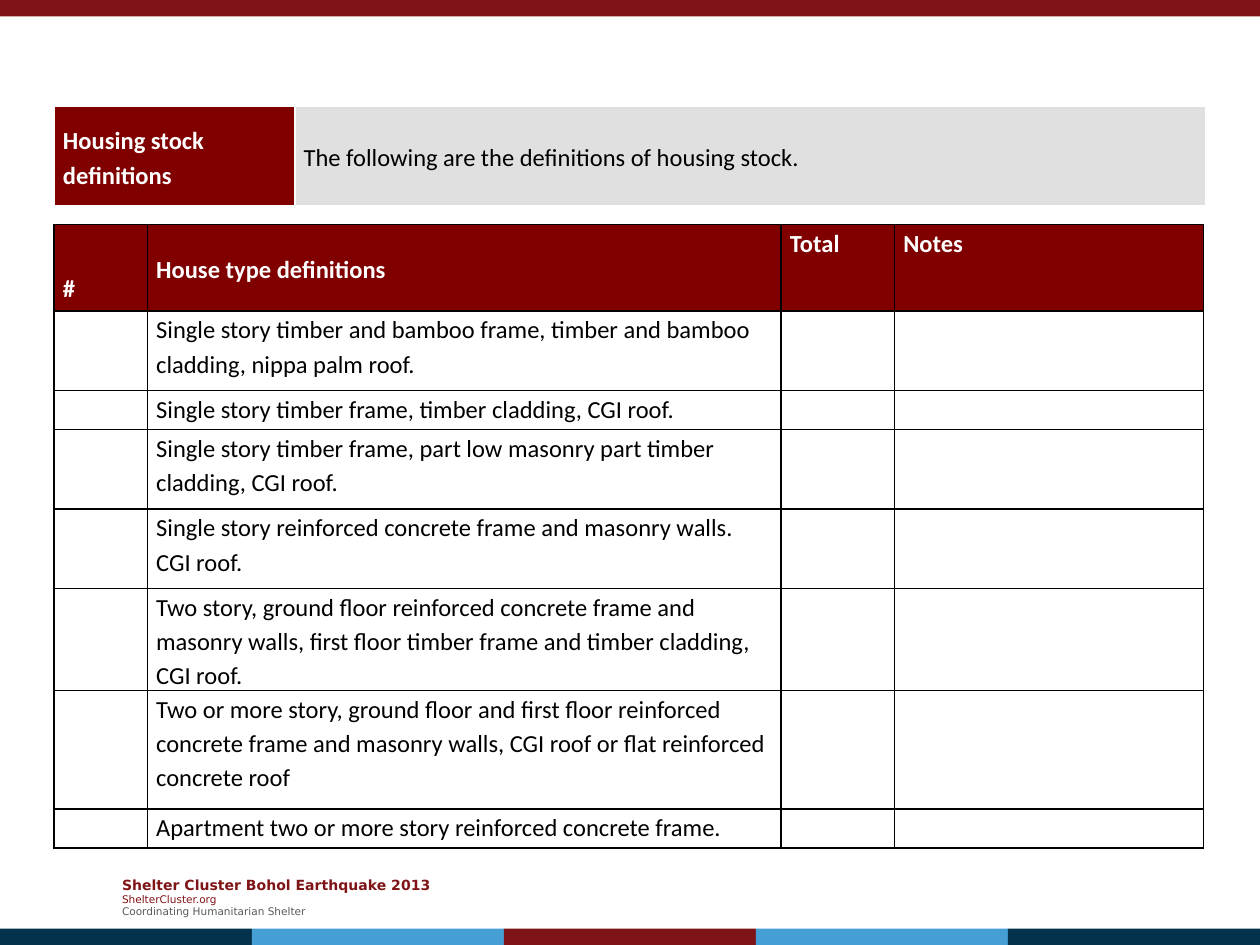
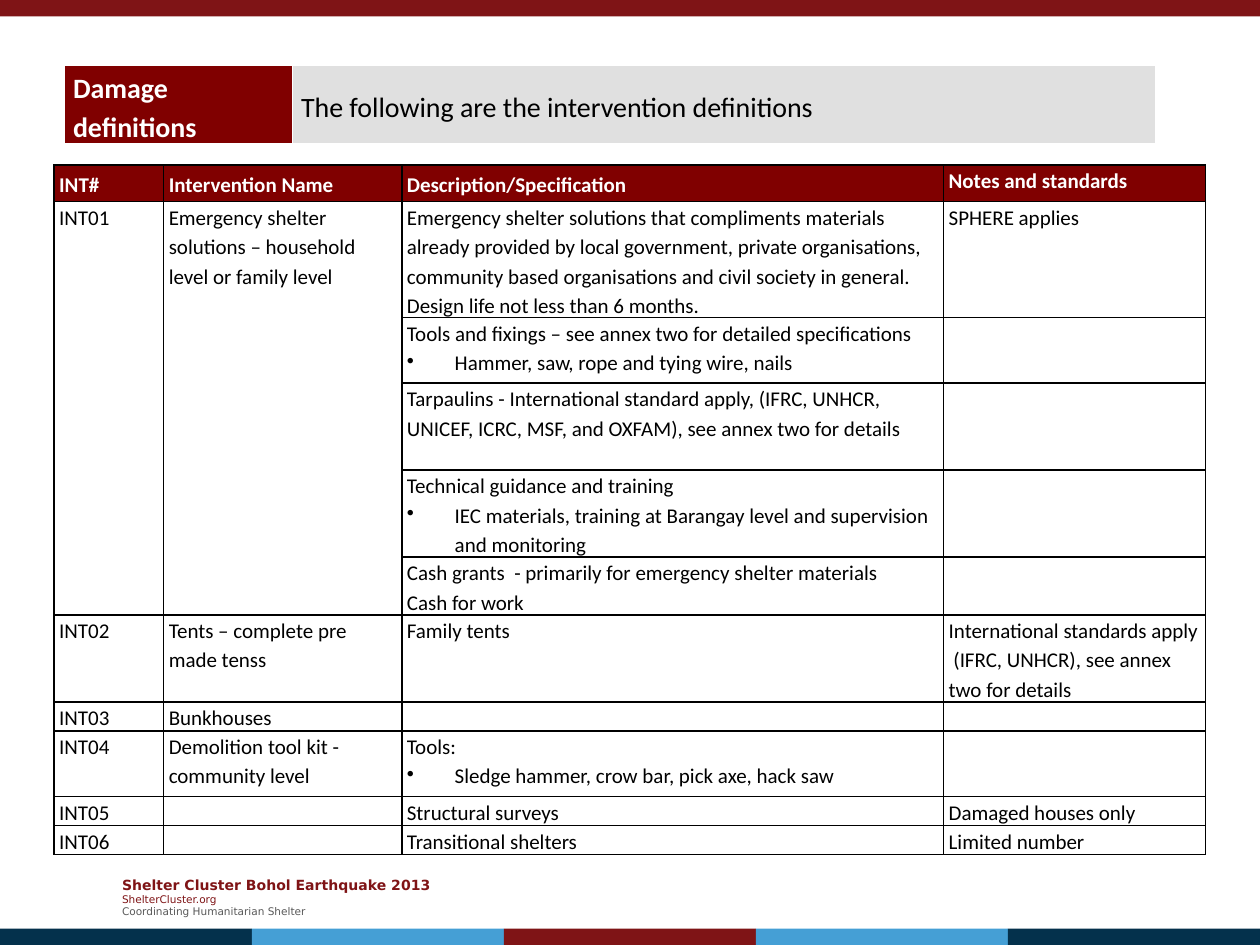
import dataclasses

import lxml.etree
import pptx
import pptx.dml.color
import pptx.enum.shapes
import pptx.enum.text
import pptx.oxml.ns
import pptx.util

Inches = pptx.util.Inches
qn = pptx.oxml.ns.qn
ANCHOR = pptx.enum.text.MSO_ANCHOR


@dataclasses.dataclass(frozen=True)
class Theme:
    """Colours, fonts and type sizes shared by the slides."""
    band: str = "7F1416"
    navy: str = "04314C"
    sky: str = "459FD5"
    header: str = "800000"
    panel: str = "E0E0E0"
    white: str = "FFFFFF"
    black: str = "000000"
    grey: str = "595959"
    body_font: str = "Calibri"
    footer_font: str = "DejaVu Sans"
    footer_title: float = 8
    footer_text: float = 6
    line_spacing: float = 1.15
    border: float = 1


THEME = Theme()

HOUSE_TYPES = [
    "Single story timber and bamboo frame, timber and bamboo cladding, nippa palm roof.",
    "Single story timber frame, timber cladding, CGI roof.",
    "Single story timber frame, part low masonry part timber cladding, CGI roof.",
    "Single story reinforced concrete frame and masonry walls. CGI roof.",
    "Two story, ground floor reinforced concrete frame and masonry walls, "
    "first floor timber frame and timber cladding, CGI roof.",
    "Two or more story, ground floor and first floor reinforced concrete frame "
    "and masonry walls, CGI roof or flat reinforced concrete roof",
    "Apartment two or more story reinforced concrete frame.",
]
HOUSE_ROWS = [["#", "House type definitions", "Total", "Notes"]]
HOUSE_ROWS += [["", house_type, "", ""] for house_type in HOUSE_TYPES]

INTERVENTION_ROWS = [
    ["INT#", "Intervention Name", "Description/Specification", "Notes and standards"],
    ["INT01", "Emergency shelter solutions – household level or family level",
     "Emergency shelter solutions that compliments materials already provided by local "
     "government, private organisations, community based organisations and civil society "
     "in general.\nDesign life not less than 6 months.", "SPHERE applies"],
    ["", "", "Tools and fixings – see annex two for detailed specifications\n"
     "• Hammer, saw, rope and tying wire, nails", ""],
    ["", "", "Tarpaulins - International standard apply, (IFRC, UNHCR, UNICEF, ICRC, MSF, "
     "and OXFAM), see annex two for details", ""],
    ["", "", "Technical guidance and training\n"
     "• IEC materials, training at Barangay level and supervision and monitoring", ""],
    ["", "", "Cash grants  - primarily for emergency shelter materials\nCash for work", ""],
    ["INT02", "Tents – complete pre made tenss", "Family tents",
     "International standards apply  (IFRC, UNHCR), see annex two for details"],
    ["INT03", "Bunkhouses", "", ""],
    ["INT04", "Demolition tool kit - community level",
     "Tools:\n• Sledge hammer, crow bar, pick axe, hack saw", ""],
    ["INT05", "", "Structural surveys", "Damaged houses only"],
    ["INT06", "", "Transitional shelters", "Limited number"],
]


def rgb(value):
    """Turn a hex string into a colour."""
    return pptx.dml.color.RGBColor.from_string(value)


def style_run(r, font, size, color, bold=False):
    """Format one run."""
    r.font.name = font
    r.font.size = pptx.util.Pt(size)
    r.font.bold = bold
    r.font.color.rgb = rgb(color)


def add_bullet(p):
    """Give a paragraph a hanging bullet."""
    pPr = p._p.get_or_add_pPr()
    pPr.set("marL", str(Inches(0.38)))
    pPr.set("indent", str(-Inches(0.38)))
    lxml.etree.SubElement(pPr, qn("a:buChar")).set("char", "•")


def set_borders(cell, color):
    """Draw a line on all four sides of a cell."""
    tcPr = cell._tc.get_or_add_tcPr()
    for side in ("lnL", "lnR", "lnT", "lnB"):
        ln = lxml.etree.SubElement(tcPr, qn(f"a:{side}"))
        ln.set("w", str(pptx.util.Pt(THEME.border)))
        fill = lxml.etree.SubElement(ln, qn("a:solidFill"))
        lxml.etree.SubElement(fill, qn("a:srgbClr")).set("val", color)


def fill_cell(cell, text, size, color, bold, inset, top=0):
    """Write a cell's paragraphs; lines that start with a bullet are list items."""
    cell.margin_left = cell.margin_right = Inches(inset)
    cell.margin_top, cell.margin_bottom = Inches(top), 0
    tf = cell.text_frame
    tf.text = text
    for p in tf.paragraphs:
        if p.text.startswith("• "):
            p.text = p.text[2:]
            add_bullet(p)
        p.line_spacing = THEME.line_spacing
        for r in p.runs:
            style_run(r, THEME.body_font, size, color, bold)
        if not p.runs:
            end = lxml.etree.SubElement(p._p, qn("a:endParaRPr"))
            end.set("sz", str(size * 100))


def add_grid(slide, left, top, widths, heights, border):
    """Add a plain bordered table with the given column widths and row heights."""
    frame = slide.shapes.add_table(len(heights), len(widths), Inches(left), Inches(top),
                                   Inches(sum(widths)), Inches(sum(heights)))
    table = frame.table
    table.first_row = table.horz_banding = False
    for column, width in zip(table.columns, widths):
        column.width = Inches(width)
    for row, height in zip(table.rows, heights):
        row.height = Inches(height)
    for cell in table.iter_cells():
        set_borders(cell, border)
        cell.fill.background()
    return table


def add_banner(slide, left, top, widths, height, label, statement, size):
    """Add the heading band: a dark label and a light statement."""
    table = add_grid(slide, left, top, widths, [height], THEME.white)
    parts = [(label, THEME.header, THEME.white, True),
             (statement, THEME.panel, THEME.black, False)]
    for cell, (text, fill, color, bold) in zip(table.iter_cells(), parts):
        fill_cell(cell, text, size, color, bold, 0.07, 0.01)
        cell.vertical_anchor = ANCHOR.MIDDLE
        cell.fill.solid()
        cell.fill.fore_color.rgb = rgb(fill)


def add_definitions(slide, left, top, widths, heights, rows, size, inset, middle_headers):
    """Add a definitions table with a dark header row."""
    table = add_grid(slide, left, top, widths, heights, THEME.black)
    for i, row in enumerate(rows):
        for j, text in enumerate(row):
            cell = table.cell(i, j)
            header = i == 0
            fill_cell(cell, text, size, THEME.white if header else THEME.black, header, inset)
            if header:
                cell.fill.solid()
                cell.fill.fore_color.rgb = rgb(THEME.header)
                if j in middle_headers:
                    cell.vertical_anchor = ANCHOR.MIDDLE
    return table


def add_bar(slide, left, top, width, color):
    """Add one flat colour bar."""
    sp = slide.shapes.add_shape(pptx.enum.shapes.MSO_SHAPE.RECTANGLE, Inches(left),
                                Inches(top), Inches(width), Inches(0.13))
    sp.shadow.inherit = False
    sp.fill.solid()
    sp.fill.fore_color.rgb = rgb(color)
    sp.line.fill.background()
    return sp


def add_footer(slide, left, top, width, height):
    """Add the three-line footer."""
    sp = slide.shapes.add_textbox(Inches(left), Inches(top), Inches(width), Inches(height))
    tf = sp.text_frame
    tf.word_wrap = True
    tf.vertical_anchor = ANCHOR.MIDDLE
    tf.text = "Shelter Cluster Bohol Earthquake 2013\nShelterCluster.org\nCoordinating Humanitarian Shelter"
    styles = [(THEME.footer_title, THEME.band, True),
              (THEME.footer_text, THEME.band, False),
              (THEME.footer_text, THEME.grey, False)]
    for p, style in zip(tf.paragraphs, styles):
        style_run(p.runs[0], THEME.footer_font, *style)
    return sp


def build_master(prs, slide):
    """Draw the shared bands and footer and move them to the slide master."""
    shapes = [add_footer(slide, 0.87, 6.9, 2.72, 0.44), add_bar(slide, 0, 0, 10, THEME.band)]
    colors = [THEME.navy, THEME.sky, THEME.band, THEME.sky, THEME.navy]
    width = 10 / len(colors)
    shapes += [add_bar(slide, i * width, 7.37, width, c) for i, c in enumerate(colors)]
    tree = prs.slide_master.shapes.element
    for number, sp in enumerate(shapes, 100):
        sp.element.xpath(".//p:cNvPr")[0].set("id", str(number))
        tree.insert_element_before(sp.element, "p:extLst")


def build_housing(slide):
    """Fill the housing stock slide."""
    table = add_definitions(slide, 0.43, 1.78, [0.74, 5.03, 0.9, 2.45],
                            [0.69, 0.63, 0.31, 0.63, 0.63, 0.81, 0.94, 0.31],
                            HOUSE_ROWS, 14, 0.07, {1})
    number = table.cell(0, 0)
    number.vertical_anchor = ANCHOR.BOTTOM
    number.margin_bottom = Inches(0.06)
    add_banner(slide, 0.43, 0.84, [1.91, 7.23], 0.79, "Housing stock\ndefinitions",
               "The following are the definitions of housing stock.", 14)


def build_interventions(slide):
    """Fill the intervention definitions slide."""
    table = add_definitions(slide, 0.43, 1.31, [0.87, 1.89, 4.3, 2.08],
                            [0.29, 0.92, 0.52, 0.69, 0.69, 0.46, 0.69, 0.23, 0.52, 0.23, 0.23],
                            INTERVENTION_ROWS, 12, 0.04, {0, 1, 2})
    for column in (0, 1):
        table.cell(1, column).merge(table.cell(5, column))
    add_banner(slide, 0.51, 0.52, [1.81, 6.85], 0.62, "Damage\ndefinitions",
               "The following are the intervention definitions", 16)


def main():
    """Build and save the presentation."""
    prs = pptx.Presentation()
    prs.slide_width, prs.slide_height = Inches(10), Inches(7.5)
    blank = prs.slide_layouts[6]
    housing = prs.slides.add_slide(blank)
    build_master(prs, housing)
    build_housing(housing)
    build_interventions(prs.slides.add_slide(blank))
    prs.save("out.pptx")


if __name__ == "__main__":
    main()
